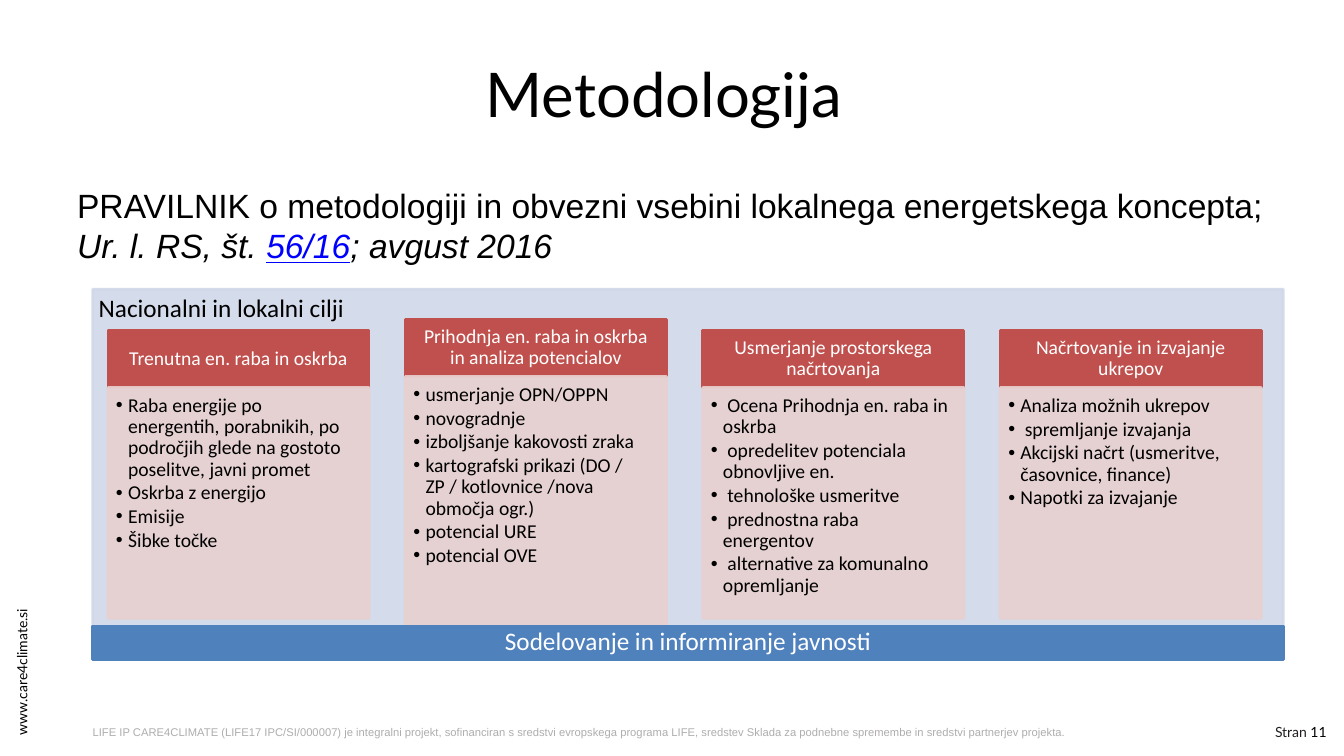
from lxml.etree import SubElement
from pptx import Presentation
from pptx.dml.color import RGBColor
from pptx.enum.shapes import MSO_SHAPE as Preset
from pptx.enum.text import MSO_ANCHOR as Anchor, MSO_AUTO_SIZE as AutoSize, PP_ALIGN as Align
from pptx.oxml.ns import qn
from pptx.util import Inches, Pt

BLACK = RGBColor(0x00, 0x00, 0x00)
WHITE = RGBColor(0xFF, 0xFF, 0xFF)
INK = RGBColor(0x23, 0x1F, 0x20)
GREY = RGBColor(0xAF, 0xAD, 0xAD)
LINK_BLUE = RGBColor(0x00, 0x00, 0xFF)
PANEL = RGBColor(0xD0, 0xD8, 0xE8)
BAND = RGBColor(0x4F, 0x81, 0xBD)
HEADING = RGBColor(0xC0, 0x50, 0x4D)
CARD = RGBColor(0xE8, 0xD0, 0xD0)

deck = Presentation()
deck.slide_width, deck.slide_height = Inches(13.33), Inches(7.5)
page = deck.slides.add_slide(deck.slide_layouts[6])
COL, ROW = deck.slide_width / 100, deck.slide_height / 100


def add_box(left, top, width, height, fill=None, opacity=100,
            anchor=Anchor.TOP, insets=(0.1, 0.05, 0.1, 0.05)):
    """Add a text box, or a filled rectangle, placed in percent of the slide."""
    place = [round(v) for v in (left * COL, top * ROW, width * COL, height * ROW)]
    if fill is None:
        box = page.shapes.add_textbox(*place)
    else:
        box = page.shapes.add_shape(Preset.RECTANGLE, *place)
        box.shadow.inherit = False
        box.fill.solid()
        box.fill.fore_color.rgb = fill
        box.line.color.rgb = fill
        box.line.width = Pt(2)
        if opacity < 100:
            for color in box._element.spPr.iter(qn("a:srgbClr")):
                SubElement(color, qn("a:alpha"), val=str(opacity * 1000))
    frame = box.text_frame
    frame.word_wrap = True
    frame.auto_size = AutoSize.NONE
    frame.vertical_anchor = anchor
    frame.margin_left, frame.margin_top, frame.margin_right, frame.margin_bottom = map(Inches, insets)
    return box


def write(para, text, size, font, color, align=Align.LEFT, spacing=None):
    para.alignment = align
    para.line_spacing = spacing
    span = para.add_run()
    span.text = text
    span.font.size, span.font.name = Pt(size), font
    span.font.color.rgb = color
    return span


# Page furniture
site = add_box(-5.25, 84.53, 13.73, 3.6, anchor=Anchor.MIDDLE)
site.rotation = 270
write(site.text_frame.paragraphs[0], "www.care4climate.si", 10, "Lato", BLACK)

number = add_box(91.2, 95.07, 8.25, 3.6, anchor=Anchor.MIDDLE)
for text, color in (("Stran ", INK), ("11", BLACK)):
    write(number.text_frame.paragraphs[0], text, 10, "Lato", color, Align.RIGHT)

funding = add_box(6.15, 95.33, 86.7, 3.2)
write(funding.text_frame.paragraphs[0],
      "LIFE IP CARE4CLIMATE (LIFE17 IPC/SI/000007) je integralni projekt, sofinanciran s sredstvi "
      "evropskega programa LIFE, sredstev Sklada za podnebne spremembe in sredstvi partnerjev projekta.",
      8, "Arial", GREY)

# Title and regulation
title = add_box(4.4, 4, 90, 16.67, anchor=Anchor.MIDDLE)
write(title.text_frame.paragraphs[0], "Metodologija", 44, "Lato", BLACK, Align.CENTER)

regulation = add_box(5, 23.8, 90, 66)
for text, color, italic, underline in (
    ("PRAVILNIK o metodologiji in obvezni vsebini lokalnega energetskega koncepta; ", BLACK, False, False),
    ("Ur. l. RS, št. ", BLACK, True, False),
    ("56/16", LINK_BLUE, True, True),
    ("; avgust 2016", BLACK, True, False),
):
    span = write(regulation.text_frame.paragraphs[0], text, 24, "Arial", color)
    span.font.italic, span.font.underline = italic, underline

# Goals panel with four cards
PANEL_LEFT, PANEL_WIDTH = 6.9, 88.58
goals = add_box(PANEL_LEFT, 38.27, PANEL_WIDTH, 48, PANEL, 90, insets=(0.06, 0.06, 0.08, 0.09))
write(goals.text_frame.paragraphs[0], "Nacionalni in lokalni cilji", 18, "Calibri", BLACK, spacing=0.9)

CARD_LEFT, CARD_PITCH, CARD_WIDTH, HEADING_HEIGHT = 8.03, 22.13, 19.43, 7.53
LOW, HIGH = (43.73, 30.53), (42.27, 33.47)  # heading top, card height
cards = (
    ("Trenutna en. raba in oskrba", LOW, (
        "Raba energije po energentih, porabnikih, po področjih glede na gostoto poselitve, javni promet",
        "Oskrba z energijo",
        "Emisije",
        "Šibke točke")),
    ("Prihodnja en. raba in oskrba in analiza potencialov", HIGH, (
        "usmerjanje OPN/OPPN",
        "novogradnje",
        "izboljšanje kakovosti zraka",
        "kartografski prikazi (DO / ZP / kotlovnice /nova območja ogr.)",
        "potencial URE",
        "potencial OVE")),
    ("Usmerjanje prostorskega načrtovanja", LOW, (
        " Ocena Prihodnja en. raba in oskrba",
        " opredelitev potenciala obnovljive en.",
        " tehnološke usmeritve",
        " prednostna raba energentov",
        " alternative za komunalno opremljanje")),
    ("Načrtovanje in izvajanje ukrepov", LOW, (
        "Analiza možnih ukrepov",
        " spremljanje izvajanja",
        "Akcijski načrt (usmeritve, časovnice, finance)",
        "Napotki za izvajanje")),
)
for index, (name, (top, height), points) in enumerate(cards):
    left = CARD_LEFT + index * CARD_PITCH
    heading = add_box(left, top, CARD_WIDTH, HEADING_HEIGHT, HEADING,
                      anchor=Anchor.MIDDLE, insets=(0.11, 0.06, 0.11, 0.06))
    write(heading.text_frame.paragraphs[0], name, 14, "Calibri", WHITE, Align.CENTER, 0.9)
    card = add_box(left, top + HEADING_HEIGHT, CARD_WIDTH, height, CARD, 90,
                   insets=(0.08, 0.08, 0.11, 0.12))
    for row, point in enumerate(points):
        para = card.text_frame.add_paragraph() if row else card.text_frame.paragraphs[0]
        props = para._p.get_or_add_pPr()
        props.set("marL", str(Inches(0.12)))
        props.set("indent", str(-Inches(0.12)))
        SubElement(props, qn("a:buFont"), typeface="Arial")
        SubElement(props, qn("a:buChar"), char="•")
        para.space_after = Pt(1.8)
        write(para, point, 14, "Calibri", BLACK, spacing=0.9)

public = add_box(PANEL_LEFT, 82.8, PANEL_WIDTH, 4.4, BAND,
                 anchor=Anchor.MIDDLE, insets=(0.08, 0.04, 0.08, 0.04))
write(public.text_frame.paragraphs[0], "Sodelovanje in informiranje javnosti",
      18, "Calibri", WHITE, Align.CENTER, 0.9)

deck.save("out.pptx")
